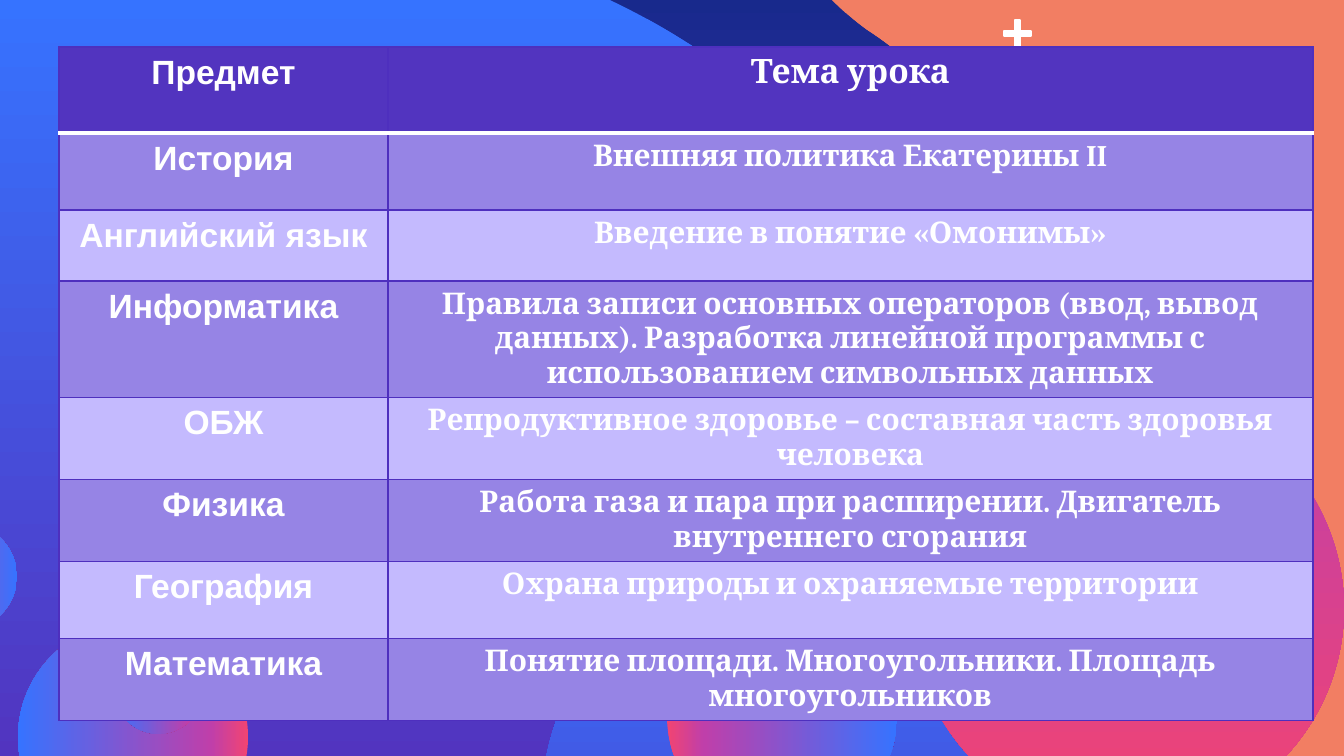
from pptx import Presentation
from pptx.dml.color import RGBColor
from pptx.enum.shapes import MSO_SHAPE
from pptx.enum.text import PP_ALIGN
from pptx.oxml import parse_xml
from pptx.oxml.ns import nsdecls, qn
from pptx.util import Pt

THEME = {
    "back": "F27E63", "white": "FFFFFF", "edge": "4E2FBE",
    "head": "5234BF", "dark": "9684E5", "light": "C4BAFE",
    "navy": [(0, "18298C"), (100, "5234BF")],
    "blue": [(0, "3673FF"), (100, "5234BF")],
    "pink": [(0, "BF3FAA"), (100, "F24472")],
    "glow": [(0, "F24472"), (16, "BF3FAA"), (100, "3673FF")],
    "fonts": ("Arial", "Cambria"), "big": 18, "small": 16,
    "thin": 0.75, "thick": 2,
}

LESSONS = [
    ("Предмет", "Тема урока", 86),
    ("История", "Внешняя политика Екатерины II", 77),
    ("Английский язык", "Введение в понятие «Омонимы»", 71),
    ("Информатика", "Правила записи основных операторов (ввод, вывод данных). "
     "Разработка линейной программы с использованием символьных данных", 113),
    ("ОБЖ", "Репродуктивное здоровье – составная часть здоровья человека", 71),
    ("Физика", "Работа газа и пара при расширении. "
     "Двигатель внутреннего сгорания", 71),
    ("География", "Охрана природы и охраняемые территории", 77),
    ("Математика", "Понятие площади. Многоугольники. "
     "Площадь многоугольников", 75),
]
COLS = (329, 925)
CORNER = (59, 47)
HIGH = 687

BLOBS = [
    ("navy", (452, -5, 664, 511), [
        (827, -5),
        (839, 8, 853, 20, 868, 31), (922, 66, 978, 124, 1001, 215),
        (1012, 263, 1038, 306, 1075, 339), (1095, 357, 1114, 384, 1116, 419),
        (1113, 419, 1111, 419, 1109, 419), (1062, 415, 1015, 426, 972, 450),
        (883, 499, 774, 505, 675, 458), (524, 386, 452, 210, 508, 52),
        (515, 32, 524, 13, 534, -3), (534, -4, 535, -4, 535, -5)]),
    ("blue", (-129, -5, 1040, 770), [
        (599, -5),
        (788, 81, 911, 231, 911, 402), (911, 546, 823, 676, 683, 765),
        (634, 765), (-129, 765), (-129, -5)]),
]
DISCS = [
    ("glow", 1019, 55, 163, 90), ("blue", 542, 560, 485, 0),
    ("pink", 911, 392, 433, 0), ("pink", 767, 399, 259, 0),
    ("glow", -90, 523, 107, 270), ("glow", 1043, 542, 89, 90),
    ("glow", 667, 601, 230, 270), ("pink", 867, 439, 93, 180),
    ("glow", 18, 622, 230, 90), ("glow", 114, 645, 89, 90),
]
PLUSES = [(1180, 594), (922, 218), (1015, 20), (1154, 290), (856, 683)]
BAR = (5, 27)
SCALE = 914400 / 134.4


def px(n):
    return round(n * SCALE)


def rgb(name):
    return RGBColor.from_string(THEME[name])


def shade(shape, name):
    shape.shadow.inherit = False
    shape.line.fill.background()
    shape.fill.gradient()
    shape.fill.gradient_angle = 270
    stops = shape._element.spPr.find(".//" + qn("a:gsLst"))
    for old in list(stops):
        stops.remove(old)
    for pos, tint in THEME[name]:
        stops.append(parse_xml(
            f'<a:gs {nsdecls("a")} pos="{pos * 1000}">'
            f'<a:srgbClr val="{tint}"/></a:gs>'))


def draw_blob(slide, name, box, moves):
    x, y, w, h = box
    pen = slide.shapes.build_freeform(x, y, scale=SCALE)
    pen.add_line_segments([(x + w, y), (x + w, y + h), (x, y + h)])
    blob = pen.convert_to_shape()
    route = blob._element.spPr.find(".//" + qn("a:path"))
    for old in list(route):
        route.remove(old)
    for i, move in enumerate(moves):
        tag = "moveTo" if i == 0 else "lnTo" if len(move) == 2 else "cubicBezTo"
        dots = "".join(f'<a:pt x="{a - x}" y="{b - y}"/>'
                       for a, b in zip(move[::2], move[1::2]))
        route.append(parse_xml(f'<a:{tag} {nsdecls("a")}>{dots}</a:{tag}>'))
    route.append(parse_xml(f'<a:close {nsdecls("a")}/>'))
    shade(blob, name)


def draw_plus(slide, x, y):
    for turn in (0, 270):
        bar = slide.shapes.add_shape(
            MSO_SHAPE.RECTANGLE, *map(px, (x, y, *BAR)))
        bar.rotation = turn
        bar.shadow.inherit = False
        bar.fill.solid()
        bar.fill.fore_color.rgb = rgb("white")
        bar.line.color.rgb = rgb("white")
        bar.line.width = Pt(THEME["thin"])


def draw_back(slide):
    slide.background.fill.solid()
    slide.background.fill.fore_color.rgb = rgb("back")
    for blob in BLOBS:
        draw_blob(slide, *blob)
    for name, x, y, size, turn in DISCS:
        disc = slide.shapes.add_shape(
            MSO_SHAPE.OVAL, px(x), px(y), px(size), px(size))
        disc.rotation = turn
        shade(disc, name)
    for spot in PLUSES:
        draw_plus(slide, *spot)


def border(cell, row):
    sides = {"L": "edge", "R": "edge",
             "T": "white" if row == 1 else "edge",
             "B": "white" if row == 0 else "edge"}
    props = cell._tc.get_or_add_tcPr()
    for i, (side, name) in enumerate(sides.items()):
        width = Pt(THEME["thick" if name == "white" else "thin"])
        props.insert(i, parse_xml(
            f'<a:ln{side} {nsdecls("a")} w="{width}"><a:solidFill>'
            f'<a:srgbClr val="{THEME[name]}"/></a:solidFill></a:ln{side}>'))


def draw_table(slide):
    frame = slide.shapes.add_table(
        len(LESSONS), len(COLS), *map(px, CORNER), px(sum(COLS)), px(HIGH))
    table = frame.table
    table.horz_banding = False
    for col, width in zip(table.columns, COLS):
        col.width = px(width)
    for r, (*texts, height) in enumerate(LESSONS):
        table.rows[r].height = px(height)
        tint = "head" if r == 0 else "dark" if r % 2 else "light"
        for c, text in enumerate(texts):
            cell = table.cell(r, c)
            cell.fill.solid()
            cell.fill.fore_color.rgb = rgb(tint)
            border(cell, r)
            cell.text_frame.text = text
            para = cell.text_frame.paragraphs[0]
            para.alignment = PP_ALIGN.CENTER
            font = para.runs[0].font
            font.name = THEME["fonts"][c]
            font.size = Pt(THEME["small" if r and c else "big"])
            font.bold = True
            font.color.rgb = rgb("white")
    frame.height = px(HIGH)


def main():
    deck = Presentation()
    deck.slide_width, deck.slide_height = px(1344), px(756)
    slide = deck.slides.add_slide(deck.slide_layouts[6])
    draw_back(slide)
    draw_table(slide)
    deck.save("out.pptx")


if __name__ == "__main__":
    main()
